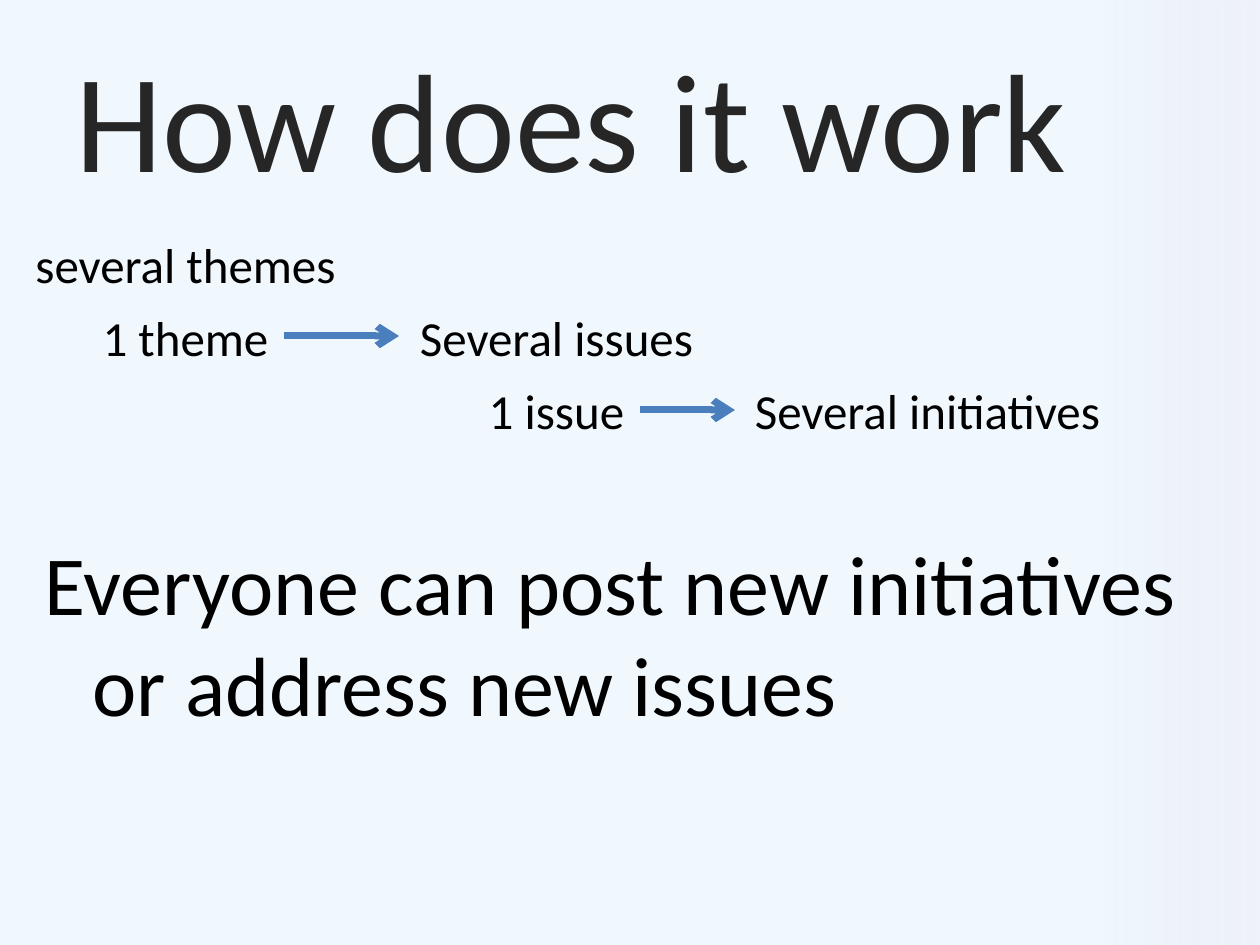
from dataclasses import dataclass
from typing import NamedTuple

from lxml import etree
from pptx import Presentation
from pptx.dml.color import RGBColor as Rgb
from pptx.enum.shapes import MSO_CONNECTOR as Connector, MSO_SHAPE as Preset
from pptx.enum.text import MSO_ANCHOR as Anchor, MSO_AUTO_SIZE as AutoSize, PP_ALIGN as Align
from pptx.oxml import parse_xml
from pptx.oxml.ns import nsdecls, qn
from pptx.util import Emu, Pt

PX_PER_INCH = 126
SLIDE_WIDTH, SLIDE_HEIGHT = 1260, 945
NO_GRID_STYLE = "{2D5ABB26-0587-4C30-8999-92F81FD0307C}"


@dataclass(frozen=True)
class Theme:
    font: str = "Calibri"
    title_color: str = "262626"
    text_color: str = "000000"
    arrow_color: str = "4B7EBC"
    sky: str = "F0F8FE"
    edge: str = "E1E8F5"
    title_size: int = 80
    statement_size: int = 48
    step_size: int = 28
    arrow_width: int = 4


class Box(NamedTuple):
    left: int
    top: int
    width: int
    height: int


class Arrow(NamedTuple):
    start: int
    end: int
    y: int


class Stop(NamedTuple):
    position: int
    color: str
    opacity: int = 100


THEME = Theme()
TITLE_BOX = Box(63, 38, 1134, 158)
STATEMENT_BOX = Box(32, 525, 1197, 350)
STEPS_BOX = Box(0, 231, 1113, 213)
STEPS = [
    ["several themes", "", ""],
    ["1 theme", "Several issues", ""],
    ["", "1 issue", "Several initiatives"],
]
ARROWS = [Arrow(284, 399, 336), Arrow(640, 735, 410)]
BACKDROP = [Stop(10, THEME.sky), Stop(87, THEME.sky), Stop(100, THEME.edge, 53)]


def px(length: int) -> Emu:
    return Emu(round(length * 914400 / PX_PER_INCH))


def write(frame, text: str, *, size: int, color: str = THEME.text_color,
          align=Align.LEFT, hanging: int = 0) -> None:
    """Fill the frame with one unbulleted paragraph."""
    paragraph = frame.paragraphs[0]
    properties = paragraph._p.get_or_add_pPr()
    properties.set("marL", str(px(hanging)))
    properties.set("indent", str(-px(hanging)))
    etree.SubElement(properties, qn("a:buNone"))
    paragraph.alignment = align
    paragraph.space_before = Pt(0)
    run = paragraph.add_run()
    run.text = text
    run.font.name = THEME.font
    run.font.size = Pt(size)
    run.font.color.rgb = Rgb.from_string(color)


def place(placeholder, box: Box, anchor) -> None:
    placeholder.left, placeholder.top, placeholder.width, placeholder.height = map(px, box)
    frame = placeholder.text_frame
    frame.word_wrap = True
    frame.auto_size = AutoSize.NONE
    frame.vertical_anchor = anchor


def add_backdrop(slide, stops: list[Stop]) -> None:
    """Put a horizontal gradient behind everything on the slide."""
    backdrop = slide.shapes.add_shape(
        Preset.RECTANGLE, 0, 0, px(SLIDE_WIDTH), px(SLIDE_HEIGHT))
    backdrop.shadow.inherit = False
    backdrop.line.fill.background()
    stop_xml = "".join(
        f'<a:gs pos="{stop.position * 1000}"><a:srgbClr val="{stop.color}">'
        f'<a:alpha val="{stop.opacity * 1000}"/></a:srgbClr></a:gs>'
        for stop in stops)
    gradient = parse_xml(
        f'<a:gradFill {nsdecls("a")} rotWithShape="1"><a:gsLst>{stop_xml}</a:gsLst>'
        '<a:lin ang="0" scaled="0"/></a:gradFill>')
    backdrop._element.spPr.find(qn("a:prstGeom")).addnext(gradient)
    slide.shapes._spTree.insert(2, backdrop._element)


def add_steps(slide, steps: list[list[str]], box: Box) -> None:
    table = slide.shapes.add_table(len(steps), len(steps[0]), *map(px, box)).table
    table.first_row = table.horz_banding = False
    table._tbl.tblPr.find(qn("a:tableStyleId")).text = NO_GRID_STYLE
    for row, labels in enumerate(steps):
        for column, label in enumerate(labels):
            cell = table.cell(row, column)
            cell.fill.background()
            cell.vertical_anchor = Anchor.MIDDLE
            if label:
                write(cell.text_frame, label, size=THEME.step_size, align=Align.CENTER)


def add_arrow(slide, arrow: Arrow) -> None:
    connector = slide.shapes.add_connector(
        Connector.STRAIGHT, px(arrow.start), px(arrow.y), px(arrow.end), px(arrow.y))
    connector.line.color.rgb = Rgb.from_string(THEME.arrow_color)
    connector.line.width = Pt(THEME.arrow_width)
    etree.SubElement(connector.line._get_or_add_ln(), qn("a:tailEnd"), type="arrow")
    etree.SubElement(connector._element.spPr, qn("a:effectLst"))


def main() -> None:
    deck = Presentation()
    deck.slide_width, deck.slide_height = px(SLIDE_WIDTH), px(SLIDE_HEIGHT)
    slide = deck.slides.add_slide(deck.slide_layouts[1])
    add_backdrop(slide, BACKDROP)

    title, statement = slide.shapes.title, slide.placeholders[1]
    place(title, TITLE_BOX, Anchor.MIDDLE)
    write(title.text_frame, "How does it work",
          size=THEME.title_size, color=THEME.title_color)
    place(statement, STATEMENT_BOX, Anchor.TOP)
    write(statement.text_frame, "Everyone can post new initiatives or address new issues",
          size=THEME.statement_size, hanging=48)

    add_steps(slide, STEPS, STEPS_BOX)
    for arrow in ARROWS:
        add_arrow(slide, arrow)
    deck.save("out.pptx")


if __name__ == "__main__":
    main()
